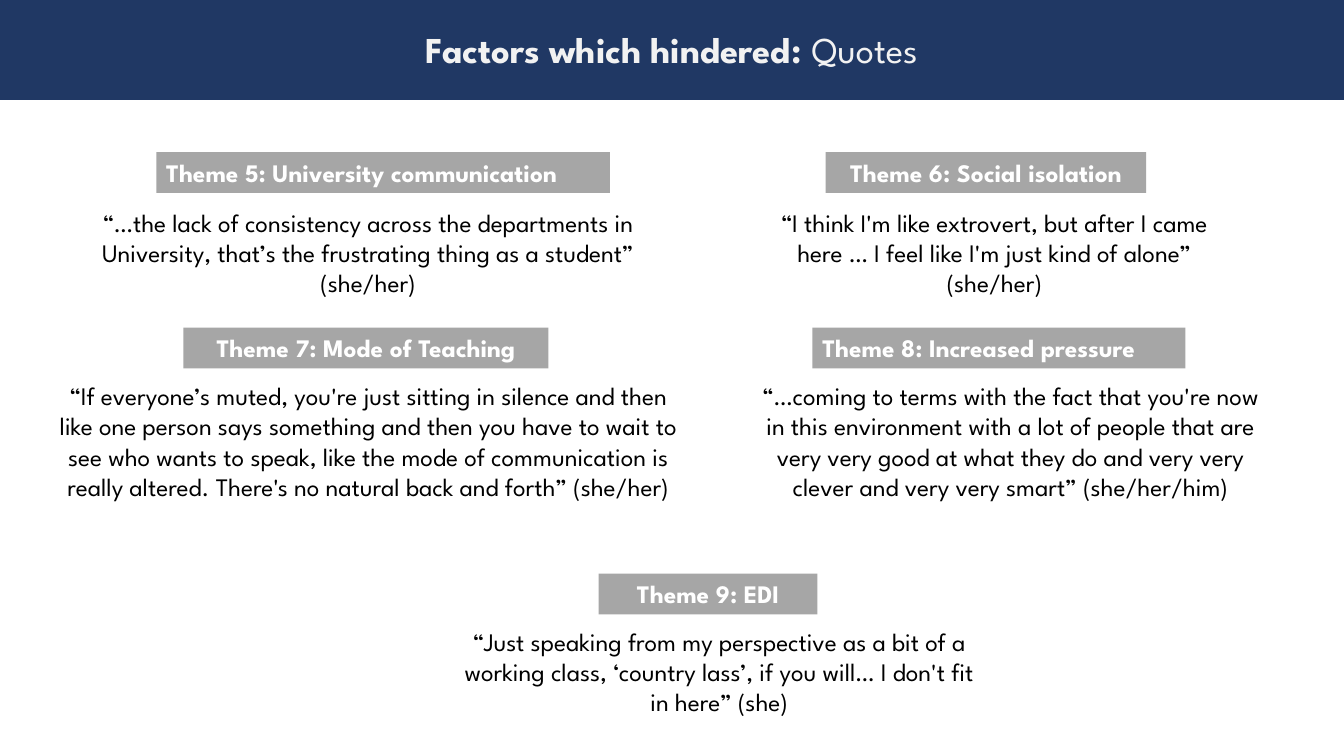
from dataclasses import dataclass
from typing import NamedTuple

from pptx import Presentation
from pptx.dml.color import RGBColor
from pptx.enum.shapes import MSO_SHAPE
from pptx.enum.text import MSO_ANCHOR, PP_ALIGN
from pptx.util import Inches, Pt

RECT = MSO_SHAPE.RECTANGLE
TOP = MSO_ANCHOR.TOP
LEFT, CENTER = PP_ALIGN.LEFT, PP_ALIGN.CENTER

SLIDE_W, SLIDE_H = Inches(13.333), Inches(7.5)
FONT = "League Spartan"
COLORS = {
    "navy": "203864",
    "grey": "A6A6A6",
    "title": "F2F2F2",
    "white": "FFFFFF",
    "black": "000000",
}
TITLE = {"size": Pt(26), "name": FONT}
LABEL = {"size": Pt(18), "name": FONT, "bold": True}
QUOTE = {"size": Pt(18), "name": FONT, "bold": False}


class Box(NamedTuple):
    """Left, top, width and height in percent of the slide's size."""
    x: float
    y: float
    w: float
    h: float

    def emu(self) -> list[int]:
        sizes = (SLIDE_W, SLIDE_H, SLIDE_W, SLIDE_H)
        return [round(size * share / 100) for size, share in zip(sizes, self)]


class Row(NamedTuple):
    label_y: float
    quote_y: float
    quote_h: float


class Span(NamedTuple):
    x: float
    w: float


@dataclass
class Theme:
    row: Row
    label_span: Span
    quote_span: Span
    label: str
    quote: str
    label_align: PP_ALIGN = CENTER


LABEL_H = 5.39
UPPER = Row(20.13, 26.73, 13.47)
MIDDLE = Row(43.33, 49.67, 21.6)
LOWER = Row(75.87, 82.13, 13.47)

THEMES = [
    Theme(UPPER, Span(11.63, 33.75), Span(1.88, 47.33),
          "Theme 5: University communication",
          "“…the lack of consistency across the departments in University, "
          "that’s the frustrating thing as a student” (she/her)", LEFT),
    Theme(UPPER, Span(61.43, 23.85), Span(52.65, 39),
          "Theme 6: Social isolation",
          "“I think I'm like extrovert, but after I came here … "
          "I feel like I'm just kind of alone” (she/her)"),
    Theme(MIDDLE, Span(13.65, 27.15), Span(0, 51.15),
          "Theme 7: Mode of Teaching",
          "“If everyone’s muted, you're just sitting in silence and then like "
          "one person says something and then you have to wait to see who wants "
          "to speak, like the mode of communication is really altered. "
          "There's no natural back and forth” (she/her)"),
    Theme(MIDDLE, Span(60.45, 27.75), Span(51.68, 43.35),
          "Theme 8: Increased pressure",
          "“…coming to terms with the fact that you're now in this environment "
          "with a lot of people that are very very good at what they do and "
          "very very clever and very very smart” (she/her/him)", LEFT),
    Theme(LOWER, Span(44.55, 16.28), Span(30, 43.35),
          "Theme 9: EDI",
          "“Just speaking from my perspective as a bit of a working class, "
          "‘country lass’, if you will… I don't fit in here” (she)"),
]


def add_run(p, text: str, font: dict, color: str) -> None:
    r = p.add_run()
    r.text = text
    for name, value in font.items():
        setattr(r.font, name, value)
    r.font.color.rgb = RGBColor.from_string(COLORS[color])


def add_bar(s, box: Box, color: str):
    sp = s.shapes.add_shape(RECT, *box.emu())
    sp.shadow.inherit = False
    sp.fill.solid()
    sp.fill.fore_color.rgb = RGBColor.from_string(COLORS[color])
    sp.line.fill.background()
    return sp


def first_paragraph(sp, align: PP_ALIGN):
    """Set the frame to wrap from the top and return its aligned paragraph."""
    tf = sp.text_frame
    tf.word_wrap = True
    tf.vertical_anchor = TOP
    p = tf.paragraphs[0]
    p.alignment = align
    return p


def add_header(s) -> None:
    add_bar(s, Box(0, 0, 100, 13.2), "navy")
    sp = s.shapes.add_textbox(*Box(0, 2.93, 100, 7.2).emu())
    p = first_paragraph(sp, CENTER)
    add_run(p, "Factors which hindered: ", TITLE | {"bold": True}, "title")
    add_run(p, "Quotes", TITLE | {"bold": False}, "title")


def add_theme(s, theme: Theme) -> None:
    row, label, quote = theme.row, theme.label_span, theme.quote_span
    sp = s.shapes.add_textbox(*Box(quote.x, row.quote_y, quote.w, row.quote_h).emu())
    p = first_paragraph(sp, CENTER)
    p.space_after = Pt(8)
    p._p.get_or_add_pPr().set("marL", str(Inches(0.49)))
    add_run(p, theme.quote, QUOTE, "black")

    sp = add_bar(s, Box(label.x, row.label_y, label.w, LABEL_H), "grey")
    add_run(first_paragraph(sp, theme.label_align), theme.label, LABEL, "white")


def main() -> None:
    prs = Presentation()
    prs.slide_width, prs.slide_height = SLIDE_W, SLIDE_H
    s = prs.slides.add_slide(prs.slide_layouts[6])
    add_header(s)
    for theme in THEMES:
        add_theme(s, theme)
    prs.save("out.pptx")


if __name__ == "__main__":
    main()
